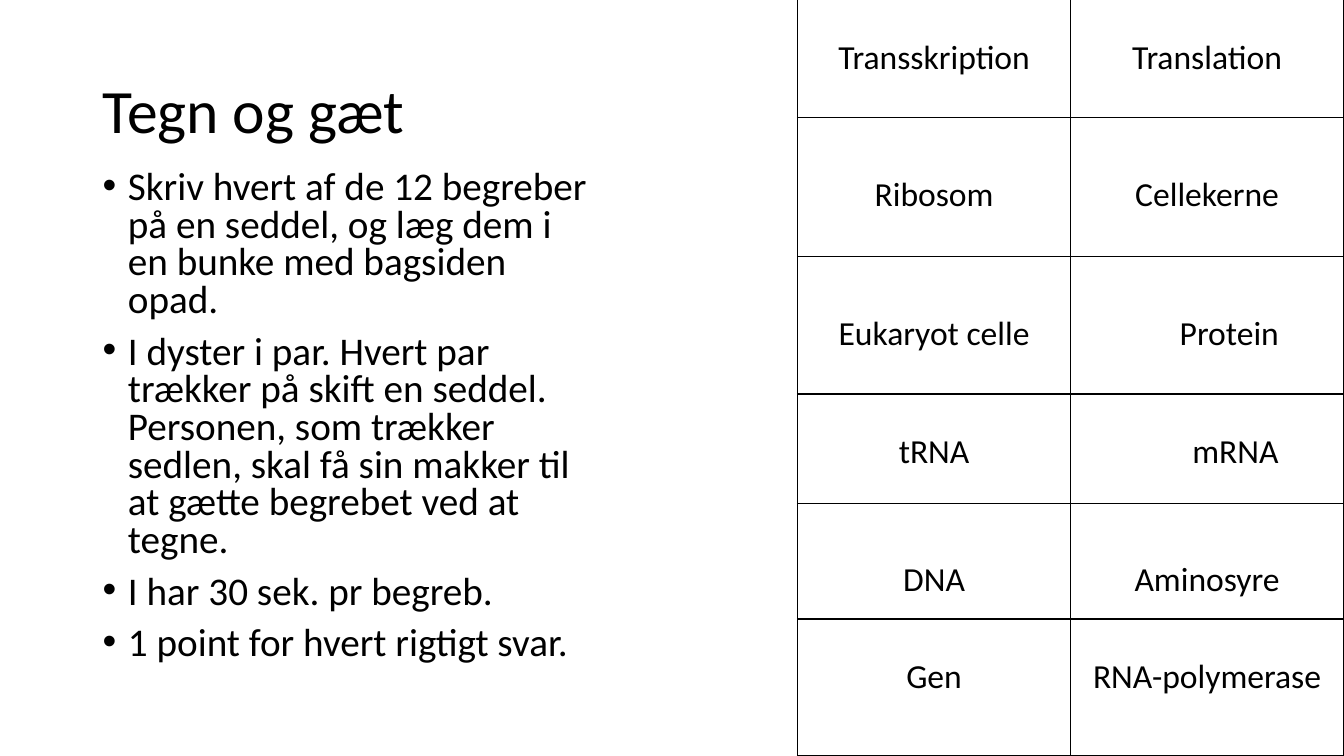
from lxml import etree
from pptx import Presentation
from pptx.dml.color import RGBColor
from pptx.enum.text import MSO_ANCHOR, MSO_AUTO_SIZE, PP_ALIGN
from pptx.oxml.ns import qn
from pptx.util import Cm, Pt

LEFT, CENTER = PP_ALIGN.LEFT, PP_ALIGN.CENTER
TOP, MIDDLE = MSO_ANCHOR.TOP, MSO_ANCHOR.MIDDLE
NO_AUTOFIT = MSO_AUTO_SIZE.NONE
BLACK = "000000"

TITLE_FONT = {"name": "Calibri", "size": Pt(44), "bold": False}
BODY_FONT = {"name": "Calibri", "size": Pt(28), "bold": False}
CELL_FONT = {"name": "Calibri", "size": Pt(24), "bold": False}

RULES = [
    "Skriv hvert af de 12 begreber på en seddel, og læg dem i en bunke med bagsiden opad.",
    "I dyster i par. Hvert par trækker på skift en seddel. Personen, som trækker sedlen, "
    "skal få sin makker til at gætte begrebet ved at tegne.",
    "I har 30 sek. pr begreb.",
    "1 point for hvert rigtigt svar.",
]

# Each row: height in cm, space above the text in cm, the two terms
TERM_ROWS = [
    (3.45, 1.42, ("Transskription", "Translation")),
    (3.5, 1.42, ("Ribosom", "Cellekerne")),
    (3.46, 1.42, ("Eukaryot celle", "Protein")),
    (2.76, 0.95, ("tRNA", "mRNA")),
    (2.91, 1.42, ("DNA", "Aminosyre")),
    (3.45, 0.95, ("Gen", "RNA-polymerase")),
]
# Terms set from the left, with their indent in cm
INDENTED_TERMS = {"Protein": 2.75, "mRNA": 3.07}


def color(hex_text):
    return RGBColor.from_string(hex_text)


def apply_format(target, values):
    for name, value in values.items():
        setattr(target, name, value)


def format_font(font, values):
    apply_format(font, values)
    font.color.rgb = color(BLACK)


def place(shape, box):
    names = ("left", "top", "width", "height")
    apply_format(shape, dict(zip(names, map(Cm, box))))


def add_bullet(para):
    properties = para._p.get_or_add_pPr()
    properties.set("marL", str(Cm(0.64)))
    properties.set("indent", str(Cm(-0.64)))
    bullet_font = etree.SubElement(properties, qn("a:buFont"))
    bullet_font.set("typeface", "Arial")
    etree.SubElement(properties, qn("a:buChar")).set("char", "•")


def add_borders(cell):
    properties = cell._tc.get_or_add_tcPr()
    for side in ("a:lnL", "a:lnR", "a:lnT", "a:lnB"):
        line = etree.SubElement(properties, qn(side), w=str(Pt(1)))
        fill = etree.SubElement(line, qn("a:solidFill"))
        etree.SubElement(fill, qn("a:srgbClr"), val=BLACK)


def fill_title(page, box):
    title = page.shapes.title
    place(title, box)
    frame = title.text_frame
    frame.text = "Tegn og gæt"
    apply_format(frame, {"auto_size": NO_AUTOFIT, "word_wrap": True,
                         "vertical_anchor": MIDDLE})
    para = frame.paragraphs[0]
    apply_format(para, {"alignment": LEFT, "line_spacing": 0.9})
    format_font(para.runs[0].font, TITLE_FONT)


def fill_rules(page, box):
    body = page.placeholders[1]
    place(body, box)
    frame = body.text_frame
    frame.text = "\n".join(RULES)
    apply_format(frame, {"auto_size": NO_AUTOFIT, "word_wrap": True,
                         "vertical_anchor": TOP})
    for index, para in enumerate(frame.paragraphs):
        add_bullet(para)
        apply_format(para, {"alignment": LEFT, "line_spacing": 0.8,
                            "space_before": Pt(10 if index else 0)})
        format_font(para.runs[0].font, BODY_FONT)


def fill_cell(cell, term, space_above):
    indent = INDENTED_TERMS.get(term)
    add_borders(cell)
    cell.fill.background()
    apply_format(cell, {
        "text": term,
        "margin_left": Cm(indent or 0.1),
        "margin_right": Cm(0.1),
        "margin_top": Cm(space_above),
        "margin_bottom": Cm(0),
        "vertical_anchor": TOP,
    })
    para = cell.text_frame.paragraphs[0]
    para.alignment = LEFT if indent else CENTER
    format_font(para.runs[0].font, CELL_FONT)


def add_terms(page, box):
    left, top, width, height = map(Cm, box)
    table = page.shapes.add_table(len(TERM_ROWS), 2, left, top, width, height).table
    apply_format(table, {"first_row": False, "horz_banding": False})
    for row, (row_height, space_above, terms) in zip(table.rows, TERM_ROWS):
        row.height = Cm(row_height)
        for cell, term in zip(row.cells, terms):
            fill_cell(cell, term, space_above)


def main():
    deck = Presentation()
    deck.slide_width, deck.slide_height = Cm(33.87), Cm(19.05)
    page = deck.slides.add_slide(deck.slide_layouts[1])
    fill_title(page, (2.33, 1.01, 29.21, 3.68))
    add_terms(page, (20.1, -0.48, 13.76, 19.53))
    fill_rules(page, (2.33, 4.17, 12.75, 13.46))
    deck.save("out.pptx")


if __name__ == "__main__":
    main()
